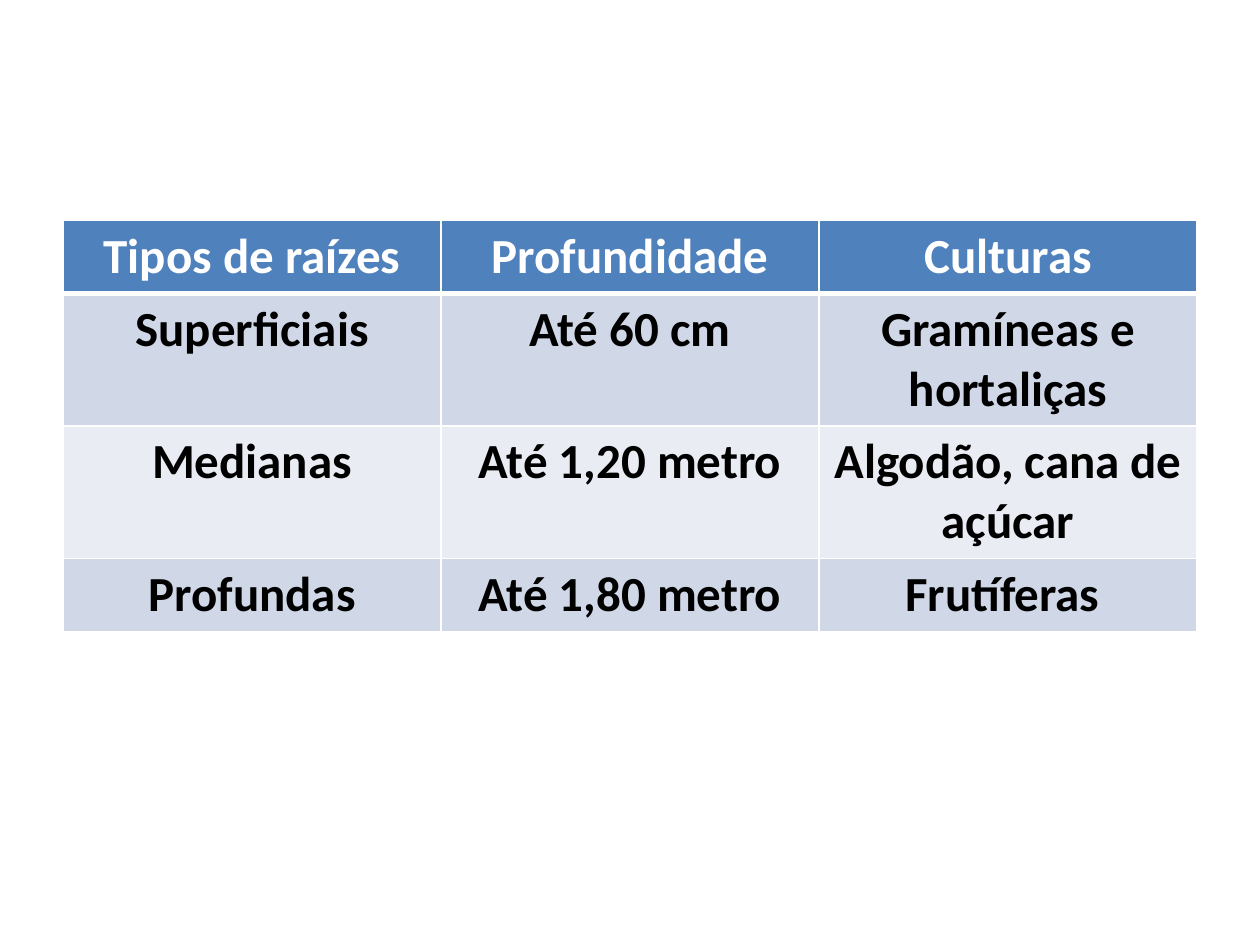
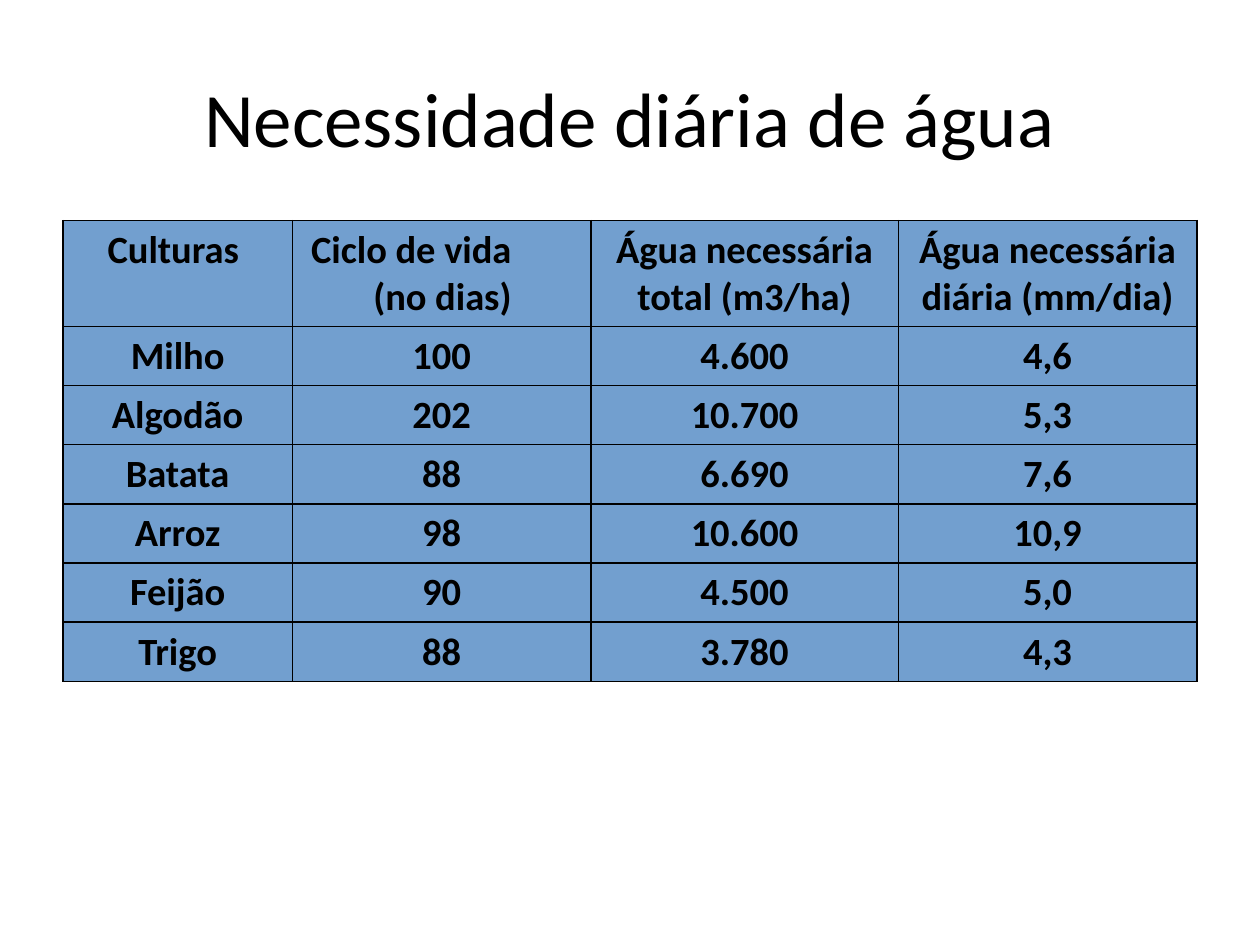
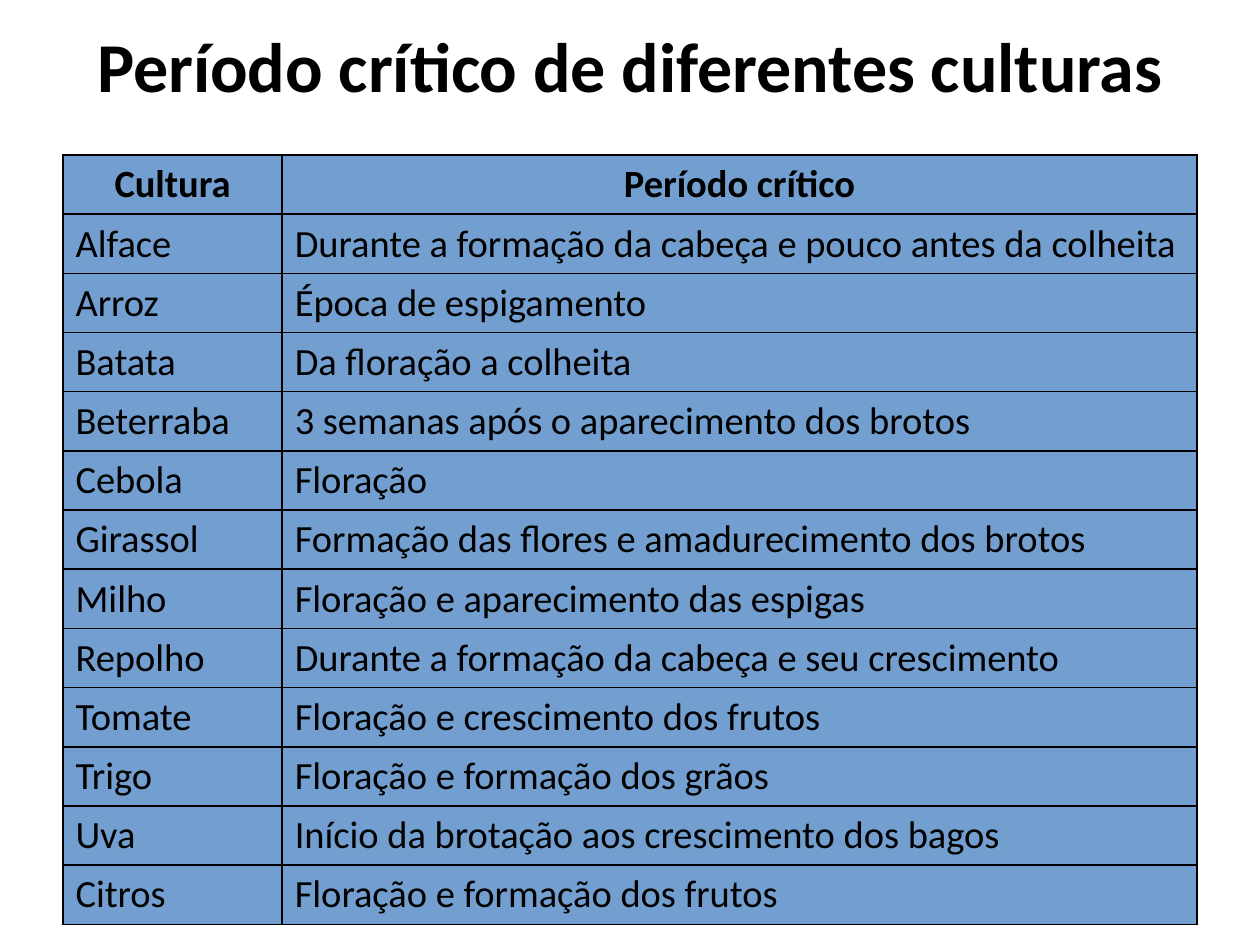
from pptx import Presentation
from pptx.dml.color import RGBColor
from pptx.enum.text import MSO_ANCHOR, PP_ALIGN
from pptx.oxml import parse_xml
from pptx.oxml.ns import nsdecls
from pptx.util import Inches, Pt

LEFT, RIGHT, CENTER = PP_ALIGN.LEFT, PP_ALIGN.RIGHT, PP_ALIGN.CENTER
MIDDLE = MSO_ANCHOR.MIDDLE
BLACK = RGBColor(0x00, 0x00, 0x00)
WHITE = RGBColor(0xFF, 0xFF, 0xFF)
NAVY = RGBColor(0x4F, 0x81, 0xBD)
BLUE = RGBColor(0x72, 0x9F, 0xCF)
MIST = RGBColor(0xD0, 0xD8, 0xE7)
PALE = RGBColor(0xE9, 0xEC, 0xF3)
FONT = "Calibri"
WIDE, HIGH = 10, 7.5
EDGE = WIDE / 20
SPAN = WIDE - 2 * EDGE
ROW = 0.47

ROOTS = [
    ("Tipos de raízes", "Profundidade", "Culturas"),
    ("Superficiais", "Até 60 cm", "Gramíneas e hortaliças"),
    ("Medianas", "Até 1,20 metro", "Algodão, cana de açúcar"),
    ("Profundas", "Até 1,80 metro", "Frutíferas "),
]
NEEDS = [
    ("Culturas ", "Ciclo de vida (no dias)",
     "Água necessária total (m3/ha)", "Água necessária diária (mm/dia)"),
    ("Milho", "100", "4.600", "4,6"),
    ("Algodão", "202", "10.700", "5,3"),
    ("Batata", "88", "6.690", "7,6"),
    ("Arroz", "98", "10.600", "10,9"),
    ("Feijão", "90", "4.500", "5,0"),
    ("Trigo", "88", "3.780", "4,3"),
]
PHASES = [
    ("Cultura", "Período crítico"),
    ("Alface", "Durante a formação da cabeça e pouco antes da colheita"),
    ("Arroz", "Época de espigamento"),
    ("Batata", "Da floração a colheita"),
    ("Beterraba", "3 semanas após o aparecimento dos brotos"),
    ("Cebola", "Floração"),
    ("Girassol", "Formação das flores e amadurecimento dos brotos"),
    ("Milho", "Floração e aparecimento das espigas"),
    ("Repolho", "Durante a formação da cabeça e seu crescimento"),
    ("Tomate", "Floração e crescimento dos frutos"),
    ("Trigo", "Floração e formação dos grãos"),
    ("Uva", "Início da brotação aos crescimento dos bagos"),
    ("Citros", "Floração e formação dos frutos"),
]


def assign(thing, values):
    for key, value in values.items():
        setattr(thing, key, value)


def write(frame, text, size, bold, tint=BLACK, align=CENTER):
    para = frame.paragraphs[0]
    para.alignment = align
    run = para.add_run()
    run.text = text
    assign(run.font, {"name": FONT, "size": Pt(size), "bold": bold})
    run.font.color.rgb = tint


def add_title(slide, text, top, size, bold=False):
    box = slide.shapes.add_textbox(
        Inches(EDGE), Inches(top), Inches(SPAN), Inches(HIGH / 6))
    assign(box.text_frame, {"word_wrap": True, "vertical_anchor": MIDDLE})
    write(box.text_frame, text, size, bold)


def add_lines(cell, tint, widths):
    props = cell._tc.get_or_add_tcPr()
    for side, width in zip("LRTB", widths):
        props.append(parse_xml(
            f'<a:ln{side} {nsdecls("a")} w="{Pt(width)}"><a:solidFill>'
            f'<a:srgbClr val="{tint}"/></a:solidFill></a:ln{side}>'))


def add_grid(slide, data, top, cols, rows, style):
    frame = slide.shapes.add_table(
        len(data), len(cols), Inches(EDGE), Inches(top),
        Inches(SPAN), Inches(sum(rows)))
    table = frame.table
    assign(table, {"first_row": False, "horz_banding": False})
    for col, width in zip(table.columns, cols):
        col.width = Inches(width)
    for row, height in zip(table.rows, rows):
        row.height = Inches(height)
    for i, texts in enumerate(data):
        look = style(i)
        for j, text in enumerate(texts):
            cell = table.cell(i, j)
            add_lines(cell, look["line"], look["widths"])
            cell.fill.solid()
            cell.fill.fore_color.rgb = look["fill"]
            write(cell.text_frame, text, **look["text"])
    return table


def band_style(i):
    head = i == 0
    above = 3 if i == 1 else 1
    below = 3 if head else 1
    return {
        "line": WHITE,
        "widths": (1, 1, above, below),
        "fill": NAVY if head else (PALE, MIST)[i % 2],
        "text": {"size": 28, "bold": True, "tint": WHITE if head else BLACK},
    }


def plain_style(i, bold=True, align=CENTER):
    return {
        "line": BLACK,
        "widths": (1, 1, 1, 1),
        "fill": BLUE,
        "text": {"size": 22, "bold": bold, "align": align},
    }


def list_style(i):
    return plain_style(i) if i == 0 else plain_style(i, False, LEFT)


def main():
    deck = Presentation()
    assign(deck, {"slide_width": Inches(WIDE), "slide_height": Inches(HIGH)})
    roots, needs, phases = [
        deck.slides.add_slide(deck.slide_layouts[6]) for _ in range(3)]

    add_grid(roots, ROOTS, 1.75, [SPAN / 3] * 3,
             [0.58, 1.05, 1.05, 0.58], band_style)

    add_title(needs, "Necessidade diária de água", 0.3, 44)
    table = add_grid(needs, NEEDS, 1.75, [1.82, 2.37, 2.44, 2.37],
                     [0.84] + [ROW] * 6, plain_style)
    cycle = table.cell(0, 1)
    cycle.margin_right = Inches(0.63)
    cycle.text_frame.paragraphs[0].alignment = RIGHT

    add_title(phases, "Período crítico de diferentes culturas", -0.11, 40, True)
    add_grid(phases, PHASES, 1.23, [1.74, 7.26],
             [ROW] * len(PHASES), list_style)

    deck.save("out.pptx")


if __name__ == "__main__":
    main()
